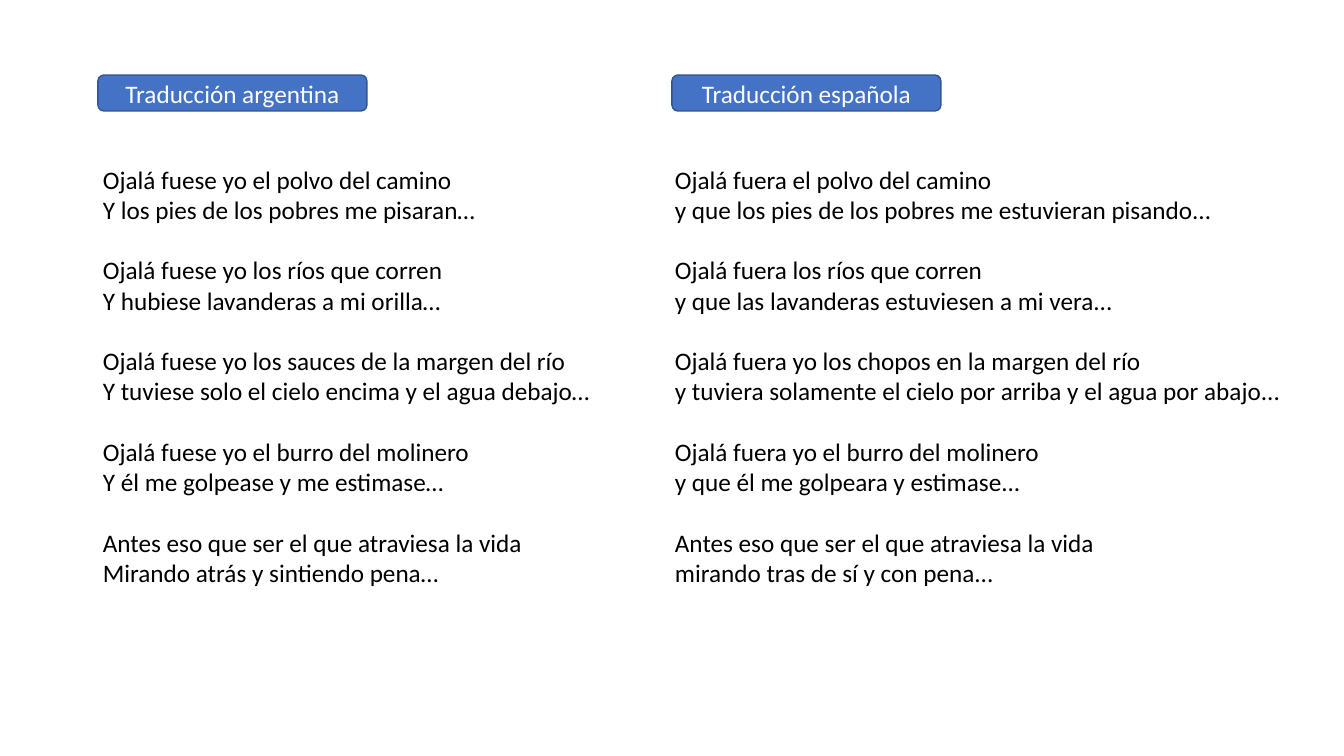
from pptx import Presentation
from pptx.dml.color import RGBColor
from pptx.enum.shapes import MSO_SHAPE
from pptx.enum.text import MSO_ANCHOR, PP_ALIGN
from pptx.util import Emu, Pt

TRANSLATIONS = [
    {
        "label": "Traducción argentina", "label_left": 98, "left": 93, "width": 547,
        "stanzas": [
            ("Ojalá fuese yo el polvo del camino",
             "Y los pies de los pobres me pisaran…"),
            ("Ojalá fuese yo los ríos que corren",
             "Y hubiese lavanderas a mi orilla…"),
            ("Ojalá fuese yo los sauces de la margen del río",
             "Y tuviese solo el cielo encima y el agua debajo…"),
            ("Ojalá fuese yo el burro del molinero",
             "Y él me golpease y me estimase…"),
            ("Antes eso que ser el que atraviesa la vida",
             "Mirando atrás y sintiendo pena…"),
        ],
    },
    {
        "label": "Traducción española", "label_left": 672, "left": 665, "width": 640,
        "stanzas": [
            ("Ojalá fuera el polvo del camino",
             "y que los pies de los pobres me estuvieran pisando..."),
            ("Ojalá fuera los ríos que corren",
             "y que las lavanderas estuviesen a mi vera..."),
            ("Ojalá fuera yo los chopos en la margen del río",
             "y tuviera solamente el cielo por arriba y el agua por abajo..."),
            ("Ojalá fuera yo el burro del molinero",
             "y que él me golpeara y estimase..."),
            ("Antes eso que ser el que atraviesa la vida",
             "mirando tras de sí y con pena..."),
        ],
    },
]

SLIDE_WIDTH, SLIDE_HEIGHT = 1344, 756
LABEL_TOP, LABEL_WIDTH, LABEL_HEIGHT = 75, 269, 36
POEM_TOP, POEM_HEIGHT = 159, 437
STANZA_GAP = Pt(21.6)
BLUE = RGBColor(0x44, 0x72, 0xC4)
DARK_BLUE = RGBColor(0x32, 0x54, 0x91)
WHITE = RGBColor(0xFF, 0xFF, 0xFF)
BLACK = RGBColor(0, 0, 0)


def px(length):
    """Turn px into EMU at 100.8 px to the inch."""
    return Emu(round(length * 914400 / 100.8))


def add_span(para, text, color):
    """Add one run of 18 pt Calibri."""
    span = para.add_run()
    span.text = text
    span.font.name = "Calibri"
    span.font.size = Pt(18)
    span.font.color.rgb = color


def add_label(page, translation):
    """Add the rounded label above a translation."""
    label = page.shapes.add_shape(
        MSO_SHAPE.ROUNDED_RECTANGLE, px(translation["label_left"]), px(LABEL_TOP),
        px(LABEL_WIDTH), px(LABEL_HEIGHT))
    label.shadow.inherit = False
    label.fill.solid()
    label.fill.fore_color.rgb = BLUE
    label.line.color.rgb = DARK_BLUE
    label.line.width = Pt(1)
    label.text_frame.vertical_anchor = MSO_ANCHOR.MIDDLE
    para = label.text_frame.paragraphs[0]
    para.alignment = PP_ALIGN.CENTER
    add_span(para, translation["label"], WHITE)


def add_poem(page, translation):
    """Add the stanzas of a translation, one paragraph per verse."""
    box = page.shapes.add_textbox(
        px(translation["left"]), px(POEM_TOP), px(translation["width"]), px(POEM_HEIGHT))
    frame = box.text_frame
    frame.word_wrap = True
    for stanza_index, stanza in enumerate(translation["stanzas"]):
        for verse_index, verse in enumerate(stanza):
            is_first = stanza_index == verse_index == 0
            para = frame.paragraphs[0] if is_first else frame.add_paragraph()
            if verse_index == 0 and not is_first:
                para.space_before = STANZA_GAP
            add_span(para, verse, BLACK)


def main():
    """Build the slide with both translations side by side."""
    deck = Presentation()
    deck.slide_width, deck.slide_height = px(SLIDE_WIDTH), px(SLIDE_HEIGHT)
    page = deck.slides.add_slide(deck.slide_layouts[6])
    for translation in TRANSLATIONS:
        add_poem(page, translation)
        add_label(page, translation)
    deck.save("out.pptx")


if __name__ == "__main__":
    main()
